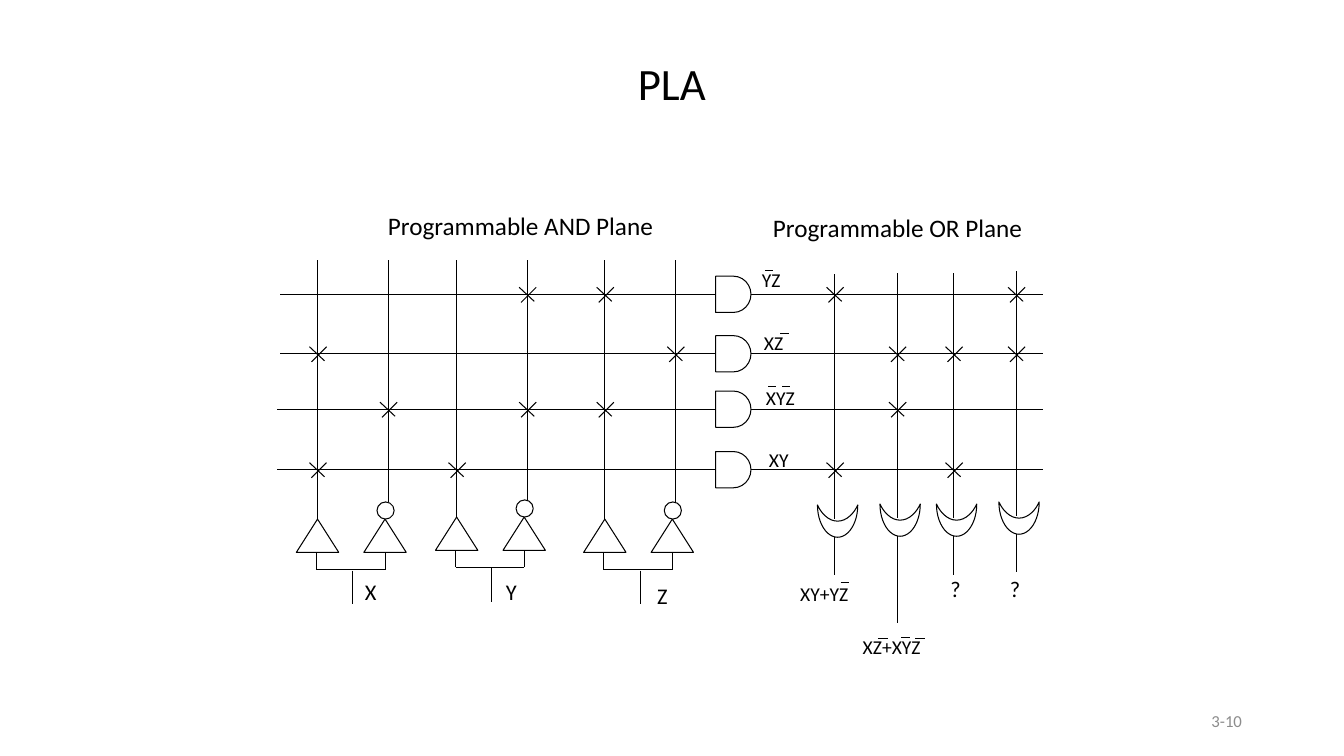
from dataclasses import dataclass
from lxml.etree import SubElement
from pptx import Presentation
from pptx.dml.color import RGBColor
from pptx.enum.shapes import MSO_CONNECTOR, MSO_SHAPE
from pptx.enum.text import MSO_ANCHOR, PP_ALIGN
from pptx.oxml.ns import qn
from pptx.util import Inches, Pt


@dataclass(frozen=True)
class Theme:
    font: str = "Calibri"
    ink: RGBColor = RGBColor(0, 0, 0)
    paper: RGBColor = RGBColor(255, 255, 255)
    gray: RGBColor = RGBColor(0x8C, 0x8C, 0x8C)
    title: int = 32
    head: int = 18
    label: int = 16
    term: int = 14
    foot: int = 12
    line: float = 0.75


COLS, ROWS = 133.33, 75
CELL = Inches(0.1)


def span(*cells):
    """Turn grid columns or rows into lengths."""
    return [round(n * CELL) for n in cells]


class Sketch:
    """Draws on one slide; every length is in grid columns or rows."""

    def __init__(self, slide, theme):
        self.slide, self.theme = slide, theme

    def add_run(self, frame, text, size, color, align):
        par = frame.paragraphs[0]
        par.alignment = align
        run = par.add_run()
        run.text = text
        font = run.font
        font.name, font.size, font.color.rgb = self.theme.font, Pt(size), color

    def title(self, text, x, y, w, h):
        box = self.slide.shapes.title
        box.left, box.top, box.width, box.height = span(x, y, w, h)
        self.add_run(box.text_frame, text, self.theme.title, self.theme.ink, PP_ALIGN.CENTER)

    def text(self, text, x, y, w, h, size):
        box = self.slide.shapes.add_textbox(*span(x, y, w, h))
        box.text_frame.word_wrap = False
        self.add_run(box.text_frame, text, size, self.theme.ink, PP_ALIGN.LEFT)

    def foot(self, text, x, y, w, h):
        frame = self.slide.shapes.add_textbox(*span(x, y, w, h)).text_frame
        frame.word_wrap = True
        frame.vertical_anchor = MSO_ANCHOR.MIDDLE
        self.add_run(frame, text, self.theme.foot, self.theme.gray, PP_ALIGN.RIGHT)

    def shape(self, kind, x, y, w, h, turn=0):
        item = self.slide.shapes.add_shape(kind, *span(x, y, w, h))
        item.shadow.inherit = False
        item.rotation = turn
        item.fill.solid()
        item.fill.fore_color.rgb = self.theme.paper
        item.line.color.rgb = self.theme.ink
        item.line.width = Pt(self.theme.line)
        return item

    def line(self, x1, y1, x2, y2):
        wire = self.slide.shapes.add_connector(MSO_CONNECTOR.STRAIGHT, *span(x1, y1, x2, y2))
        wire.line.color.rgb = self.theme.ink
        wire.line.width = Pt(self.theme.line)
        SubElement(wire._element.spPr, qn("a:effectLst"))
        return wire

    def cross(self, x, y):
        self.line(x + 0.9, y - 0.7, x - 0.6, y + 0.8)
        self.line(x - 0.8, y - 0.7, x + 0.7, y + 0.7)

    def gate(self, y, start):
        """Draw an AND gate with its input and output wires."""
        body = self.shape(MSO_SHAPE.FLOWCHART_DELAY, 71, y - 1.8, 3.5, 3.6)
        self.line(start, y, 71, y).end_connect(body, 1)
        self.line(74.5, y, 103.5, y).begin_connect(body, 3)

    def input(self, name, x, lift, label, plain, bar):
        """Draw a true and an inverted input column with their crosses."""
        base = 54.8 - lift
        true, inv = x + 2.1, x + 9.1
        self.line(true, base - 3.3, true, 25.8)
        self.line(inv, base - 5, inv, 25.8)
        for left in (x, x + 6.7):
            self.shape(MSO_SHAPE.ISOSCELES_TRIANGLE, left, base - 3.3, 4.2, 3.3)
        self.shape(MSO_SHAPE.OVAL, x + 8, base - 5, 1.7, 1.7)
        for leg in (x + 2, x + 8.8):
            self.line(leg, base, leg, base + 1.7)
        self.line(x + 2, base + 1.7, x + 8.8, base + 1.7)
        self.line(x + 5.6, base + 1.8, x + 5.6, base + 5.1)
        self.text(name, *label, 3.2, 3.7, self.theme.label)
        for column, hits in ((true, plain), (inv, bar)):
            for row in hits:
                self.cross(column, TERMS[row])

    def output(self, x, lift, stem, hits):
        """Draw an OR column with its gate, stem and crosses."""
        self.line(x, 27.2 - lift, x, 51.5 - lift)
        self.shape(MSO_SHAPE.MOON, x - 1.3, 49.7 - lift, 3.2, 4, 270)
        self.line(x, 53.3 - lift, x, 53.3 - lift + stem)
        for row in hits:
            self.cross(x, TERMS[row])


TERMS = (29.2, 35.1, 40.6, 46.6)
STARTS = (27.8, 27.8, 27.5, 27.5)
# name, left, lift, label place, crosses on the true and inverted columns
INPUTS = (
    ("X", 29.4, 0, (35.2, 56.9), (1, 3), (2,)),
    ("Y", 43.2, 0.2, (49.2, 56.9), (3,), (0, 2)),
    ("Z", 57.9, 0, (64.2, 57.3), (0, 2), (1,)),
)
# column, lift, stem length, crosses
OUTPUTS = (
    (82.8, 0, 3.7, (0, 3)),
    (89, 0.1, 8.6, (1, 2)),
    (94.6, 0.1, 3.8, (1, 3)),
    (100.8, 0.3, 3.7, (0, 1)),
)
HEADS = (("Programmable AND Plane", 37.5, 20.4, 29), ("Programmable OR Plane", 75.7, 20.6, 27))
LABELS = (
    ("YZ", 74.6, 26.1, 3.9), ("XZ", 74.8, 32.3, 3.9),
    ("XYZ", 75, 37.8, 4.9), ("XY", 75.3, 43.9, 4),
    ("XY+YZ", 78.4, 57.2, 6.8), ("XZ+XYZ", 84.6, 62.5, 7.8),
)
# left, row and width of each negation bar
BARS = (
    (75.9, 26.8, 0.8), (77.4, 33.1, 0.9), (76.2, 38.3, 0.8), (77.6, 38.3, 0.8),
    (83.4, 57.8, 0.8), (87.1, 63.3, 1), (89.4, 63.2, 0.9), (90.8, 63.3, 1),
)


def main():
    deck = Presentation()
    deck.slide_width, deck.slide_height = span(COLS, ROWS)
    theme = Theme()
    art = Sketch(deck.slides.add_slide(deck.slide_layouts[5]), theme)
    art.title("PLA", 22.5, 5, 88.3, 6.3)
    art.foot("3-10", 94.2, 69.5, 30, 4)
    for port in INPUTS:
        art.input(*port)
    for y, start in zip(TERMS, STARTS):
        art.gate(y, start)
    for port in OUTPUTS:
        art.output(*port)
    for text, x, y, w in HEADS:
        art.text(text, x, y, w, 4, theme.head)
    for x in (93.3, 99.2):
        art.text("?", x, 56.6, 3.1, 3.7, theme.label)
    for text, x, y, w in LABELS:
        art.text(text, x, y, w, 3.4, theme.term)
    for x, y, w in BARS:
        art.line(x, y, x + w, y)
    deck.save("out.pptx")


if __name__ == "__main__":
    main()
